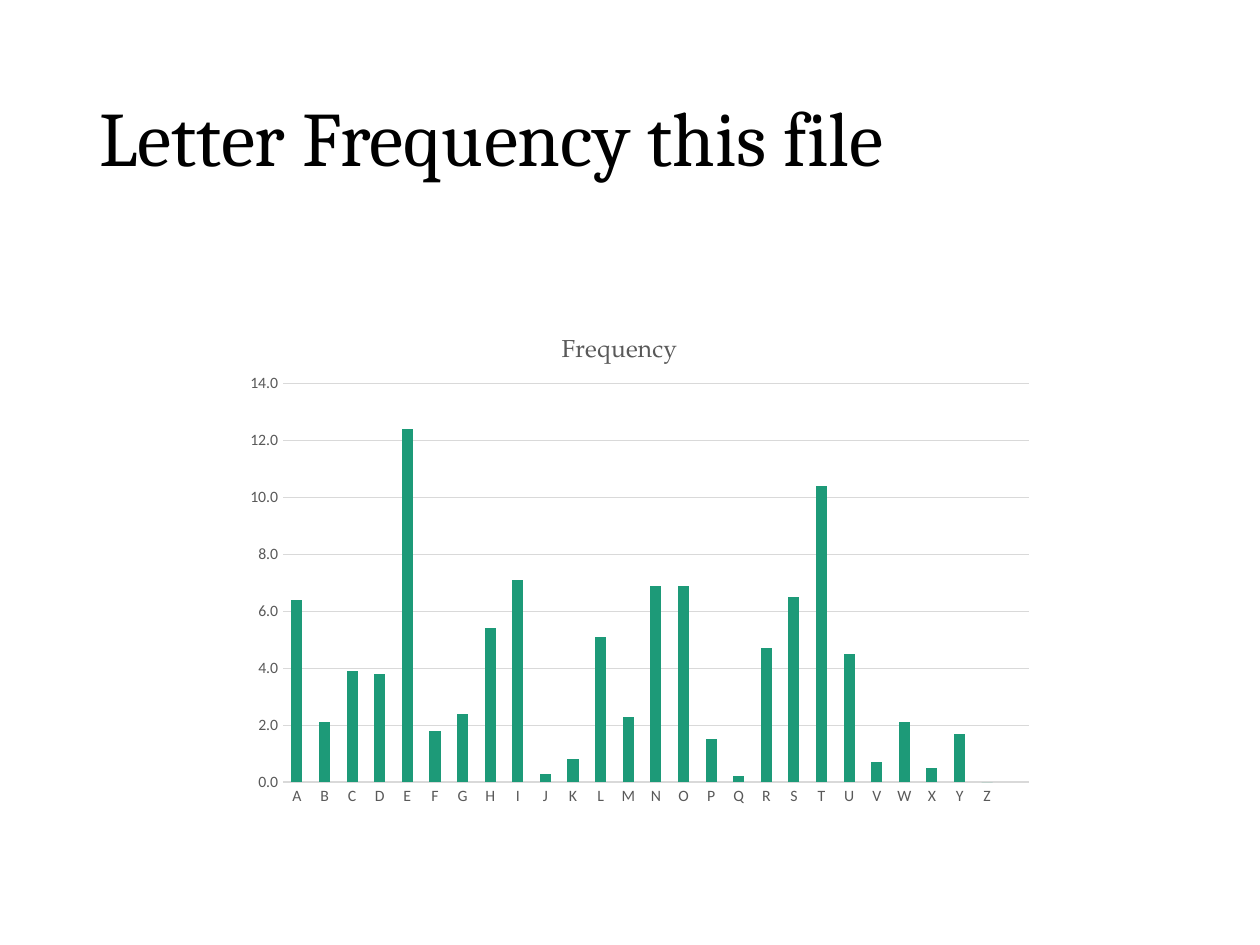
from dataclasses import dataclass

from lxml.etree import SubElement
from pptx import Presentation
from pptx.chart.data import CategoryChartData
from pptx.dml.color import RGBColor
from pptx.enum.chart import XL_CHART_TYPE, XL_TICK_MARK
from pptx.enum.text import MSO_ANCHOR
from pptx.oxml.ns import qn
from pptx.slide import Slide
from pptx.util import Cm, Pt

COLOURS = {"title": "000000", "label": "595959", "grid": "D9D9D9", "bar": "1D9A78"}
# The last category is blank and leaves a gap after Z.
LETTERS = [*"ABCDEFGHIJKLMNOPQRSTUVWXYZ", ""]
FREQUENCIES = [
    6.4, 2.1, 3.9, 3.8, 12.4, 1.8, 2.4, 5.4, 7.1, 0.3, 0.8, 5.1, 2.3,
    6.9, 6.9, 1.5, 0.2, 4.7, 6.5, 10.4, 4.5, 0.7, 2.1, 0.5, 1.7, 0, None,
]


@dataclass
class PageBuilder:
    page: Slide
    title_font: str = "Cambria"
    chart_font: str = "Calibri"
    chart_title_font: str = "TeX Gyre Pagella"

    def set_font(self, font, name, size, colour):
        font.name = name
        font.size = Pt(size)
        font.bold = False
        font.color.rgb = RGBColor.from_string(COLOURS[colour])

    def set_line(self, line):
        line.color.rgb = RGBColor.from_string(COLOURS["grid"])
        line.width = Pt(0.75)

    def add_title(self, text, left, top, width, height):
        box = self.page.shapes.add_textbox(Cm(left), Cm(top), Cm(width), Cm(height))
        frame = box.text_frame
        frame.word_wrap = True
        frame.vertical_anchor = MSO_ANCHOR.MIDDLE
        para = frame.paragraphs[0]
        para.text = text
        para.line_spacing = 0.9
        self.set_font(para.font, self.title_font, 44, "title")

    def add_column_chart(self, name, categories, values, left, top, width, height):
        data = CategoryChartData(number_format="0.0")
        data.categories = categories
        data.add_series(name, values)
        chart = self.page.shapes.add_chart(
            XL_CHART_TYPE.COLUMN_STACKED,
            Cm(left), Cm(top), Cm(width), Cm(height), data,
        ).chart
        self.set_font(chart.font, self.chart_font, 10, "title")
        chart.has_legend = False
        chart.has_title = True
        para = chart.chart_title.text_frame.paragraphs[0]
        para.text = name
        self.set_font(para.font, self.chart_title_font, 14, "label")
        chart.chart_title.include_in_layout = False

        plot = chart.plots[0]
        plot.gap_width = 150
        plot.overlap = 100
        plot.vary_by_categories = False
        fill = plot.series[0].format.fill
        fill.solid()
        fill.fore_color.rgb = RGBColor.from_string(COLOURS["bar"])
        self.style_axes(chart)
        self.place_plot(chart, x=0.089, y=0.136, w=0.911, h=0.791)

    def style_axes(self, chart):
        for axis in (chart.category_axis, chart.value_axis):
            axis.major_tick_mark = axis.minor_tick_mark = XL_TICK_MARK.NONE
            self.set_font(axis.tick_labels.font, self.chart_font, 9, "label")
        self.set_line(chart.category_axis.format.line)
        values = chart.value_axis
        values.format.line.fill.background()
        values.has_major_gridlines = True
        self.set_line(values.major_gridlines.format.line)
        values.minimum_scale = 0
        values.maximum_scale = 14
        values.major_unit = 2
        values.tick_labels.number_format = "0.0"
        values.tick_labels.number_format_is_linked = False

    def place_plot(self, chart, **fractions):
        """Fix the inner plot area as fractions of the chart's size."""
        area = chart.element.find(f".//{qn('c:plotArea')}")
        layout = area.find(qn("c:layout"))
        if layout is None:
            layout = SubElement(area, qn("c:layout"))
            area.insert(0, layout)
        manual = SubElement(layout, qn("c:manualLayout"))
        settings = {"layoutTarget": "inner", "xMode": "edge", "yMode": "edge", **fractions}
        for tag, value in settings.items():
            SubElement(manual, qn(f"c:{tag}")).set("val", str(value))


def main():
    deck = Presentation()
    deck.slide_width, deck.slide_height = Cm(25.4), Cm(19.05)
    builder = PageBuilder(deck.slides.add_slide(deck.slide_layouts[6]))
    builder.add_title("Letter Frequency this file", 1.75, 1.02, 21.9, 3.68)
    builder.add_column_chart(
        "Frequency", LETTERS, FREQUENCIES, 4.24, 6.35, 16.51, 10.16
    )
    deck.save("out.pptx")


if __name__ == "__main__":
    main()
